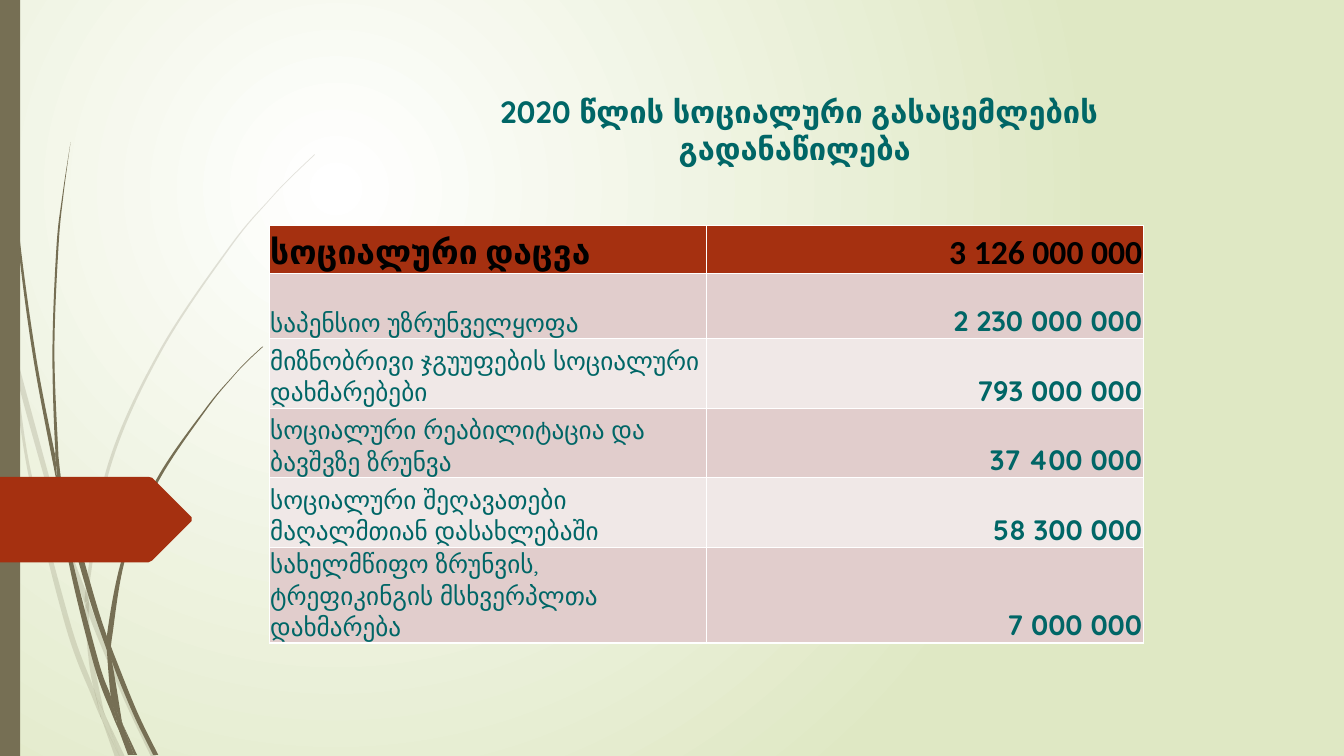
from lxml import etree
from pptx import Presentation
from pptx.dml.color import RGBColor
from pptx.enum.shapes import MSO_SHAPE
from pptx.enum.text import MSO_ANCHOR, MSO_AUTO_SIZE, PP_ALIGN
from pptx.oxml.ns import qn
from pptx.util import Inches, Pt

RECTANGLE = MSO_SHAPE.RECTANGLE
MIDDLE, BOTTOM = MSO_ANCHOR.MIDDLE, MSO_ANCHOR.BOTTOM
LEFT, CENTER, RIGHT = PP_ALIGN.LEFT, PP_ALIGN.CENTER, PP_ALIGN.RIGHT
NO_FIT = MSO_AUTO_SIZE.NONE
TITLE_ONLY = 5

COLORS = {
    "white": "FFFFFF",
    "meadow": "DFE8C4",
    "stem": "766F54",
    "rust": "A53010",
    "teal": "006666",
    "black": "000000",
    "rose": "E1CDCC",
    "blush": "F0E8E7",
}

PALE_BLADES = [
    ([(0.11, 3.5), (0.09, 3.22), (0, 2.82)], [(0, 2.99), (0.1, 3.44)]),
    ([(0.14, 3.45), (0.17, 3.76), (0.58, 5.22), (0.84, 5.99)],
     [(0.85, 5.86), (0.62, 5.2), (0.14, 3.45)]),
    ([(0.88, 5.96), (0.88, 6.1), (1.23, 6.94), (1.5, 7.51)],
     [(1.55, 7.51), (1.27, 6.92), (0.92, 6.07)]),
    ([(1.19, 7.51), (1.24, 7.51)], [(1.05, 7.11), (1.19, 7.51)]),
    ([(0.11, 3.5), (0.28, 4.7), (0.65, 6.21), (0.92, 6.93), (1.01, 7.14)],
     [(0.99, 7.07), (0.93, 6.83), (0.7, 6.19), (0.31, 4.69), (0.17, 3.76), (0.11, 3.5)]),
    ([(0.84, 5.99), (0.87, 6.46), (0.93, 6.83), (1.05, 7.11)],
     [(1.03, 7.06), (0.91, 6.46), (0.88, 6.1), (0.84, 5.99)]),
    ([(3.12, 1.53), (2.89, 1.75), (2.68, 1.97), (2.28, 2.44), (1.58, 3.48),
      (1.07, 4.61), (0.85, 5.84), (0.88, 5.96)],
     [(0.88, 5.84), (1.1, 4.62), (1.6, 3.49), (2.29, 2.45), (2.68, 1.98),
      (2.9, 1.75), (3.12, 1.54)]),
    ([(1.01, 7.14), (1.14, 7.51)], [(1.19, 7.51), (1.01, 7.14)]),
    ([(0.88, 6.1), (0.88, 5.96), (0.85, 5.86)], [(0.84, 5.99), (0.88, 6.08)]),
    ([(0.93, 6.83), (0.99, 7.07), (1.01, 7.14), (1.19, 7.51)],
     [(1.19, 7.51), (1.05, 7.11), (0.96, 6.92)]),
]
DARK_BLADES = [
    ([(0.03, 0), (0.04, 0.48), (0.07, 1.1), (0.17, 2.33), (0.33, 3.55),
      (0.56, 4.77), (0.57, 4.81)],
     [(0.55, 4.53), (0.36, 3.55), (0.19, 2.32), (0.08, 1.09), (0.05, 0.48), (0.04, 0)]),
    ([(0.6, 4.72), (0.64, 5.05), (0.88, 5.92), (1.06, 6.45)],
     [(1.06, 6.31), (0.93, 5.9), (0.6, 4.72)]),
    ([(1.1, 6.41), (1.11, 6.56), (1.32, 7.08), (1.52, 7.49)],
     [(1.57, 7.49), (1.36, 7.06), (1.13, 6.49)]),
    ([(0.57, 4.77), (0.68, 5.57), (0.93, 6.59), (1.11, 7.08), (1.17, 7.22)],
     [(1.16, 7.17), (1.1, 6.91), (0.98, 6.57), (0.72, 5.56), (0.64, 5.05), (0.57, 4.77)]),
    ([(0.7, 1.41), (0.62, 1.93), (0.56, 2.45), (0.52, 3.49), (0.55, 4.49), (0.6, 4.72)],
     [(0.58, 4.53), (0.54, 3.49), (0.58, 2.45), (0.63, 1.93), (0.7, 1.41)]),
    ([(1.33, 7.49), (1.36, 7.49)], [(1.22, 7.19), (1.33, 7.49)]),
    ([(0.57, 4.77), (0.64, 5.05)], [(0.6, 4.72), (0.55, 4.49), (0.55, 4.53)]),
    ([(2.6, 3.44), (2.45, 3.58), (2.31, 3.73), (2.04, 4.05), (1.56, 4.74),
      (1.22, 5.51), (1.06, 6.31), (1.1, 6.41)],
     [(1.11, 6.33), (1.25, 5.52), (1.58, 4.76), (2.05, 4.06), (2.31, 3.74),
      (2.45, 3.59), (2.61, 3.44)]),
    ([(1.17, 7.22), (1.27, 7.49)], [(1.31, 7.49), (1.17, 7.22)]),
    ([(1.06, 6.45), (1.1, 6.91), (1.16, 7.06), (1.22, 7.19)],
     [(1.21, 7.16), (1.11, 6.56), (1.06, 6.45)]),
    ([(1.06, 6.45), (1.11, 6.56)], [(1.1, 6.41), (1.06, 6.31), (1.06, 6.33)]),
    ([(1.1, 6.91), (1.16, 7.17), (1.17, 7.22), (1.3, 7.49)],
     [(1.33, 7.49), (1.22, 7.19), (1.16, 7.06)]),
]
ARROW = [(0, 4.73), (1.47, 4.73), (1.51, 4.74), (1.9, 5.13), (1.9, 5.17),
         (1.51, 5.56), (1.47, 5.58), (0, 5.58)]

TITLE = "2020 წლის სოციალური გასაცემლების გადანაწილება "
ROWS = [
    ("სოციალური დაცვა", "3 126 000 000", 0.47),
    ("საპენსიო უზრუნველყოფა", "2 230 000 000", 0.65),
    ("მიზნობრივი ჯგუუფების სოციალური დახმარებები", "793 000 000", 0.69),
    ("სოციალური რეაბილიტაცია და ბავშვზე ზრუნვა", " 37 400 000", 0.69),
    ("სოციალური შეღავათები მაღალმთიან დასახლებაში", "58 300 000", 0.69),
    ("სახელმწიფო ზრუნვის, ტრეფიკინგის მსხვერპლთა დახმარება", "7 000 000", 0.89),
]


def rgb(name):
    return RGBColor.from_string(COLORS[name])


def write(frame, text, *, size, color="teal", font="Quicksand", bold=True, align=LEFT):
    para = frame.paragraphs[0]
    para.alignment = align
    span = para.add_run()
    span.text = text
    span.font.size = Pt(size)
    span.font.name = font
    span.font.bold = bold
    span.font.color.rgb = rgb(color)


def paint(shape, color, opacity=100):
    shape.shadow.inherit = False
    shape.fill.solid()
    shape.fill.fore_color.rgb = rgb(color)
    shape.line.fill.background()
    if opacity < 100:
        tint = shape.fill._xPr.find(qn("a:solidFill"))[0]
        etree.SubElement(tint, qn("a:alpha"), val=str(opacity * 1000))


def add_outline(slide, points, color, opacity=100):
    corners = [(Inches(x), Inches(y)) for x, y in points]
    builder = slide.shapes.build_freeform(*corners[0])
    builder.add_line_segments(corners[1:], close=True)
    shape = builder.convert_to_shape()
    paint(shape, color, opacity)
    return shape


def bezier_points(edge, i):
    before, start, end, after = (edge[max(i - 1, 0)], edge[i], edge[i + 1],
                                 edge[min(i + 2, len(edge) - 1)])
    leave = [s + (e - b) / 6 for b, s, e in zip(before, start, end)]
    arrive = [e - (a - s) / 6 for s, e, a in zip(start, end, after)]
    return leave, arrive, end


def add_blade(slide, edges, opacity):
    shape = add_outline(slide, edges[0] + edges[1], "stem", opacity)
    lines = shape._element.findall(".//" + qn("a:lnTo"))
    first = 0
    for edge in edges:
        for i in range(len(edge) - 1):
            line = lines[first + i]
            curve = etree.Element(qn("a:cubicBezTo"))
            for x, y in bezier_points(edge, i):
                etree.SubElement(curve, qn("a:pt"), x=str(Inches(x) - shape.left),
                                 y=str(Inches(y) - shape.top))
            line.getparent().replace(line, curve)
        first += len(edge)


def set_background(slide):
    fill = slide.background.fill
    fill.gradient()
    for stop, color in zip(fill.gradient_stops, ("white", "meadow")):
        stop.color.rgb = rgb(color)
    gradient = slide.element.find(".//" + qn("a:gradFill"))
    gradient.remove(gradient.find(qn("a:lin")))
    circle = etree.SubElement(gradient, qn("a:path"), {"path": "circle"})
    etree.SubElement(circle, qn("a:fillToRect"), l="50000", t="50000", r="100000", b="100000")


def format_cell(cell, fill):
    properties = cell._tc.get_or_add_tcPr()
    for side in ("lnL", "lnR", "lnT", "lnB"):
        line = etree.SubElement(properties, qn("a:" + side), w=str(Pt(1)))
        paint_line = etree.SubElement(line, qn("a:solidFill"))
        etree.SubElement(paint_line, qn("a:srgbClr"), val=COLORS["white"])
    cell.fill.solid()
    cell.fill.fore_color.rgb = rgb(fill)
    cell.vertical_anchor = BOTTOM
    cell.margin_left = cell.margin_right = cell.margin_top = Inches(0.01)
    cell.margin_bottom = 0


def add_budget_table(slide):
    height = sum(row[2] for row in ROWS)
    table = slide.shapes.add_table(len(ROWS), 2, Inches(2.67), Inches(2.24),
                                   Inches(8.67), Inches(height)).table
    table.horz_banding = False
    for index, (label, amount, row_height) in enumerate(ROWS):
        table.rows[index].height = Inches(row_height)
        fill = "rose" if index % 2 else "blush"
        label_style, amount_style = {"size": 18, "bold": False}, {"size": 20}
        if index == 0:
            fill = "rust"
            label_style = amount_style = {"size": 24, "font": "Calibri", "color": "black"}
        label_cell, amount_cell = table.rows[index].cells
        format_cell(label_cell, fill)
        format_cell(amount_cell, fill)
        write(label_cell.text_frame, label, **label_style)
        write(amount_cell.text_frame, amount, align=RIGHT, **amount_style)


def set_title(slide):
    title = slide.shapes.title
    title.left, title.top = Inches(4.75), Inches(0.83)
    title.width, title.height = Inches(6.35), Inches(0.92)
    frame = title.text_frame
    frame.word_wrap = True
    frame.auto_size = NO_FIT
    frame.vertical_anchor = MIDDLE
    write(frame, TITLE, size=22, align=CENTER)


def main():
    deck = Presentation()
    deck.slide_width, deck.slide_height = Inches(13.33), Inches(7.5)
    slide = deck.slides.add_slide(deck.slide_layouts[TITLE_ONLY])
    set_background(slide)
    for blades, opacity in ((PALE_BLADES, 20), (DARK_BLADES, 100)):
        for edges in blades:
            add_blade(slide, edges, opacity)
    band = slide.shapes.add_shape(RECTANGLE, 0, 0, Inches(0.2), Inches(7.5))
    paint(band, "stem")
    add_outline(slide, ARROW, "rust")
    set_title(slide)
    add_budget_table(slide)
    deck.save("out.pptx")


if __name__ == "__main__":
    main()
